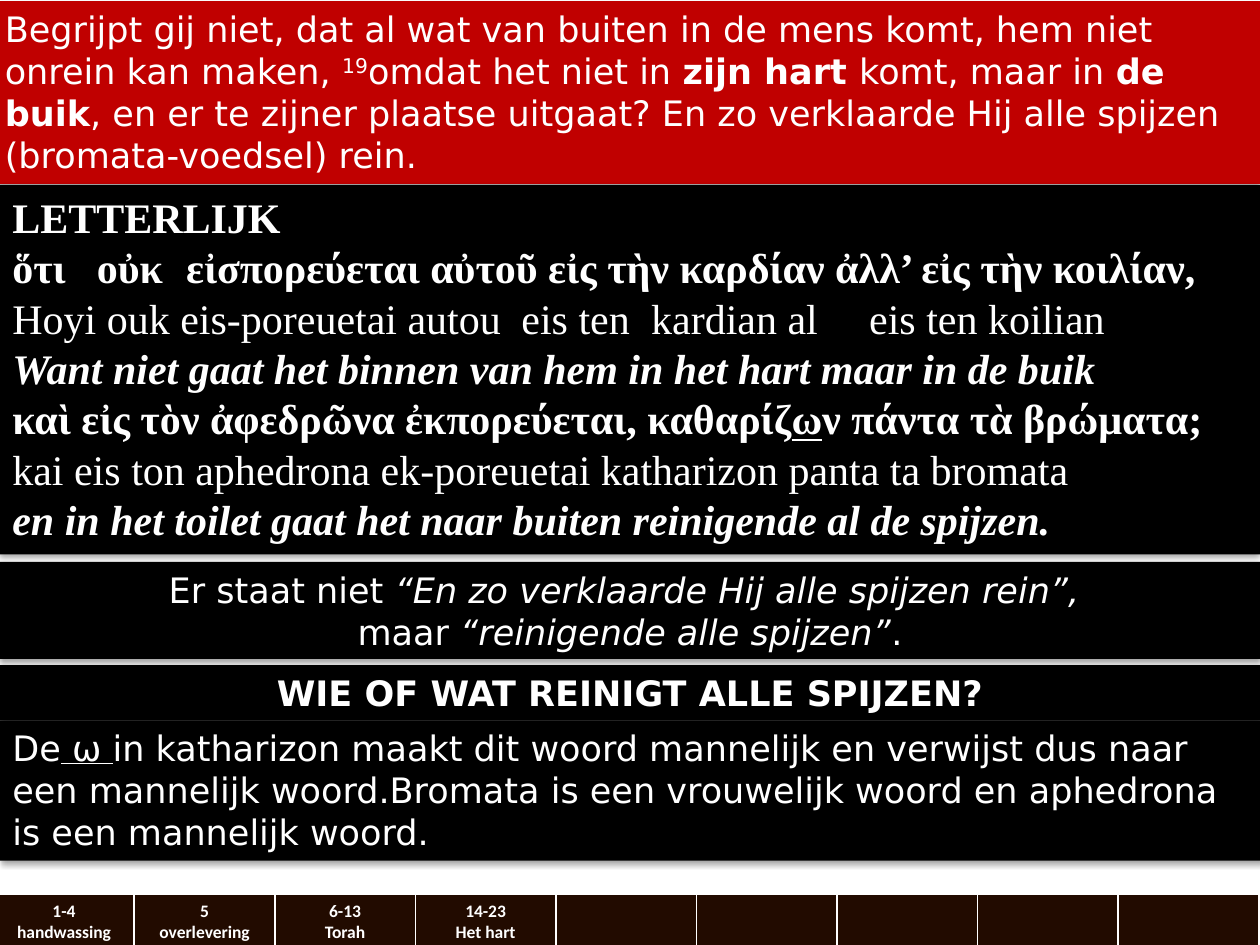
from lxml import etree
from pptx import Presentation
from pptx.dml.color import RGBColor
from pptx.enum.shapes import MSO_SHAPE
from pptx.enum.text import MSO_ANCHOR, MSO_AUTO_SIZE, PP_ALIGN
from pptx.oxml import parse_xml
from pptx.oxml.ns import nsdecls, qn
from pptx.util import Inches, Pt

RECTANGLE = MSO_SHAPE.RECTANGLE
TOP = MSO_ANCHOR.TOP
GROW = MSO_AUTO_SIZE.SHAPE_TO_FIT_TEXT
LEFT, CENTER = PP_ALIGN.LEFT, PP_ALIGN.CENTER

WHITE = RGBColor(0xFF, 0xFF, 0xFF)
BLACK = RGBColor(0x00, 0x00, 0x00)
RED = RGBColor(0xC0, 0x00, 0x00)
BROWN = RGBColor(0x22, 0x0B, 0x00)

SANS = {"name": "DejaVu Sans", "size": Pt(20)}
SERIF = {"name": "Times New Roman", "size": Pt(24)}
LABEL = {"name": "Calibri", "size": Pt(10), "bold": True}

PLAIN = {}
BOLD = {"bold": True}
ITALIC = {"italic": True}
BOLD_ITALIC = {"bold": True, "italic": True}
UNDERLINE = {"underline": True}
BOLD_UNDERLINE = {"bold": True, "underline": True}
SUPERSCRIPT = {"baseline": "30000"}

VERSE = [[
    ("Begrijpt gij niet, dat al wat van buiten in de mens komt, hem niet "
     "onrein kan maken, ", PLAIN),
    ("19", SUPERSCRIPT),
    ("omdat het niet in ", PLAIN),
    ("zijn hart ", BOLD),
    ("komt, maar in ", PLAIN),
    ("de buik", BOLD),
    (", en er te zijner plaatse uitgaat? En zo verklaarde Hij alle spijzen "
     "(bromata-voedsel) rein.", PLAIN),
]]
INTERLINEAR = [
    [("LETTERLIJK", BOLD)],
    [("ὅτι\tοὐκ\tεἰσπορεύεται αὐτοῦ εἰς τὴν καρδίαν ἀλλ’ εἰς τὴν κοιλίαν,", BOLD)],
    [("Hoyi ouk eis-poreuetai autou\teis ten\tkardian al\teis ten koilian", PLAIN)],
    [("Want niet gaat het binnen van hem in het hart maar in de buik", BOLD_ITALIC)],
    [("καὶ εἰς τὸν ἀφεδρῶνα ἐκπορεύεται, καθαρίζ", BOLD),
     ("ω", BOLD_UNDERLINE),
     ("ν πάντα τὰ βρώματα;", BOLD)],
    [("kai eis ton aphedrona ek-poreuetai katharizon panta ta bromata", PLAIN)],
    [("en in het toilet gaat het naar buiten reinigende al de spijzen.", BOLD_ITALIC)],
]
WORD_GAPS = {1: (0.67, 1.38), 2: (4.04, 5.07, 6.8)}
GRAMMAR = [
    [("De", PLAIN), (" ω ", UNDERLINE),
     ("in katharizon maakt dit woord mannelijk en verwijst dus naar", PLAIN)],
    [("een mannelijk woord.Bromata is een vrouwelijk woord en aphedrona", PLAIN)],
    [("is een mannelijk woord.", PLAIN)],
]
CORRECTION = [
    [("Er staat niet ", PLAIN),
     ("“En zo verklaarde Hij alle spijzen rein”, ", ITALIC)],
    [("maar ", PLAIN), ("“reinigende alle spijzen”", ITALIC), (".", PLAIN)],
]
QUESTION = [[("WIE OF WAT REINIGT ALLE SPIJZEN?", BOLD)]]

SECTIONS = [("1-4", "handwassing"), ("5", "overlevering"),
            ("6-13", "Torah"), ("14-23", "Het hart")]
SECTION_COUNT = 9
BORDERS = {"lnL": 1, "lnR": 1, "lnT": 1, "lnB": 3}


def add_run(paragraph, text, style):
    run = paragraph.add_run()
    run.text = text
    run.font.color.rgb = WHITE
    for attribute, value in style.items():
        if attribute == "baseline":
            run._r.get_or_add_rPr().set(attribute, value)
        else:
            setattr(run.font, attribute, value)


def write_paragraphs(frame, paragraphs, base, align, tab_stops):
    for index, runs in enumerate(paragraphs):
        paragraph = frame.add_paragraph() if index else frame.paragraphs[0]
        paragraph.alignment = align
        if index in tab_stops:
            tabs = etree.SubElement(paragraph._p.get_or_add_pPr(), qn("a:tabLst"))
            for position in tab_stops[index]:
                etree.SubElement(tabs, qn("a:tab"), pos=str(Inches(position)), algn="l")
        for text, style in runs:
            add_run(paragraph, text, {**base, **style})


def add_shadow(panel):
    panel.shadow.inherit = False
    effects = panel._element.spPr.find(qn("a:effectLst"))
    effects.append(parse_xml(
        f'<a:outerShdw {nsdecls("a")} blurRad="40000" dist="23000" dir="5400000" '
        'rotWithShape="0"><a:srgbClr val="000000"><a:alpha val="35000"/>'
        '</a:srgbClr></a:outerShdw>'))


def add_panel(slide, box, paragraphs, fill=BLACK, base=SANS, align=LEFT,
              wrap=True, tab_stops=None):
    panel = slide.shapes.add_shape(RECTANGLE, *map(Inches, box))
    panel.fill.solid()
    panel.fill.fore_color.rgb = fill
    panel.line.fill.background()
    add_shadow(panel)
    frame = panel.text_frame
    layout = {"word_wrap": wrap, "auto_size": GROW, "vertical_anchor": TOP}
    for attribute, value in layout.items():
        setattr(frame, attribute, value)
    write_paragraphs(frame, paragraphs, base, align, tab_stops or {})


def add_borders(cell):
    properties = cell._tc.get_or_add_tcPr()
    for side, width in BORDERS.items():
        properties.append(parse_xml(
            f'<a:{side} {nsdecls("a")} w="{Pt(width)}"><a:solidFill>'
            f'<a:srgbClr val="{WHITE}"/></a:solidFill></a:{side}>'))


def add_section_bar(slide):
    box = map(Inches, (-0.05, 7.1, 10.04, 0.43))
    table = slide.shapes.add_table(1, SECTION_COUNT, *box).table
    for index, cell in enumerate(table.iter_cells()):
        add_borders(cell)
        cell.fill.solid()
        cell.fill.fore_color.rgb = BROWN
        cell.margin_bottom = Inches(0.04)
        if index < len(SECTIONS):
            lines = [[(line, PLAIN)] for line in SECTIONS[index]]
            write_paragraphs(cell.text_frame, lines, LABEL, CENTER, {})


def main():
    deck = Presentation()
    deck.slide_width, deck.slide_height = Inches(10), Inches(7.5)
    slide = deck.slides.add_slide(deck.slide_layouts[6])
    add_section_bar(slide)
    add_panel(slide, (-0.06, 0.01, 10.06, 1.45), VERSE, fill=RED)
    add_panel(slide, (0, 1.47, 10, 2.93), INTERLINEAR, base=SERIF, tab_stops=WORD_GAPS)
    add_panel(slide, (0, 5.72, 10.03, 1.11), GRAMMAR, wrap=False)
    add_panel(slide, (0, 4.46, 10, 0.77), CORRECTION, align=CENTER)
    add_panel(slide, (0, 5.28, 10, 0.44), QUESTION, align=CENTER)
    deck.save("out.pptx")


if __name__ == "__main__":
    main()
